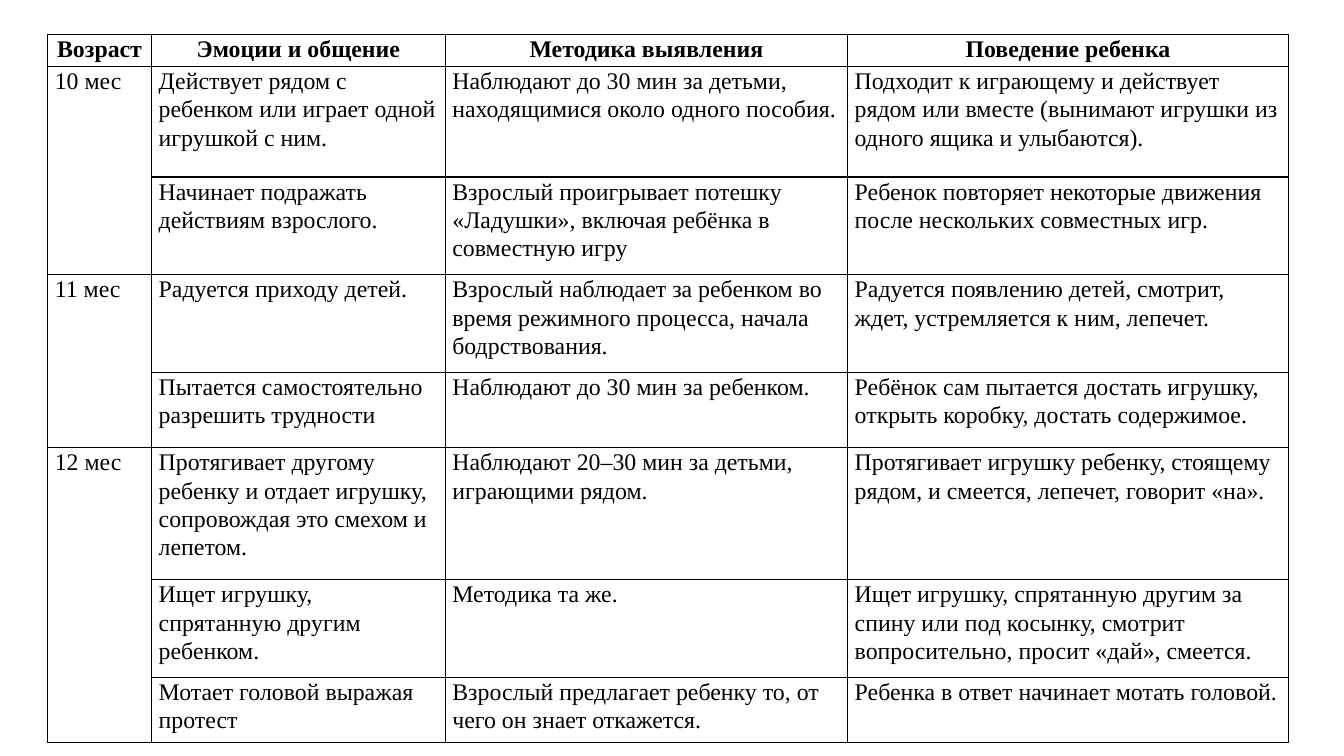
from lxml.etree import SubElement as Sub
from pptx import Presentation
from pptx.dml.color import RGBColor
from pptx.enum.text import PP_ALIGN as Align
from pptx.oxml.ns import qn
from pptx.util import Cm, Pt

BLACK = RGBColor(0, 0, 0)
FONT = "Times New Roman"
COLS = [2.62, 7.4, 10.14, 11.11]
ROWS = [0.81, 2.79, 2.46, 2.46, 1.9, 3.33, 2.46, 1.63]

HEAD = ["Возраст", "Эмоции и общение", "Методика выявления", "Поведение ребенка"]
# Each age with its rows: emotion, method, behaviour
AGES = {
    "10 мес": [
        ("Действует рядом с ребенком или играет одной игрушкой с ним.",
         "Наблюдают до 30 мин за детьми, находящимися около одного пособия.",
         "Подходит к играющему и действует рядом или вместе "
         "(вынимают игрушки из одного ящика и улыбаются)."),
        ("Начинает подражать действиям взрослого.",
         "Взрослый проигрывает потешку «Ладушки», включая ребёнка в совместную игру",
         "Ребенок повторяет некоторые движения после нескольких совместных игр."),
    ],
    "11 мес": [
        ("Радуется приходу детей.",
         "Взрослый наблюдает за ребенком во время режимного процесса, "
         "начала бодрствования.",
         "Радуется появлению детей, смотрит, ждет, устремляется к ним, лепечет."),
        ("Пытается самостоятельно разрешить трудности",
         "Наблюдают до 30 мин за ребенком.",
         "Ребёнок сам пытается достать игрушку, открыть коробку, достать содержимое."),
    ],
    "12 мес": [
        ("Протягивает другому ребенку и отдает игрушку, "
         "сопровождая это смехом и лепетом.",
         "Наблюдают 20–30 мин за детьми, играющими рядом.",
         "Протягивает игрушку ребенку, стоящему рядом, и смеется, "
         "лепечет, говорит «на»."),
        ("Ищет игрушку, спрятанную другим ребенком.",
         "Методика та же.",
         "Ищет игрушку, спрятанную другим за спину или под косынку, "
         "смотрит вопросительно, просит «дай», смеется."),
        ("Мотает головой выражая протест",
         "Взрослый предлагает ребенку то, от чего он знает откажется.",
         "Ребенка в ответ начинает мотать головой."),
    ],
}


def frame(cell):
    """Draw thin black borders round a cell and leave it unfilled."""
    props = cell._tc.get_or_add_tcPr()
    for side in ("a:lnL", "a:lnR", "a:lnT", "a:lnB"):
        line = Sub(props, qn(side), w=str(Pt(1)))
        fill = Sub(line, qn("a:solidFill"))
        Sub(fill, qn("a:srgbClr"), val=str(BLACK))
    cell.fill.background()


def write(cell, text, head=False):
    """Put text in a cell in the style of the head or the body."""
    cell.margin_left = cell.margin_right = Cm(0.18)
    cell.margin_top = cell.margin_bottom = 0
    para = cell.text_frame.paragraphs[0]
    para.text = text
    para.alignment = Align.CENTER if head else Align.LEFT
    para.line_spacing = 1.07
    font = para.runs[0].font
    font.name, font.size, font.bold = FONT, Pt(17), head
    font.color.rgb = BLACK


def add_grid(slide, left, top, width, height):
    """Build the table of ages in the given box."""
    table = slide.shapes.add_table(
        len(ROWS), len(COLS), Cm(left), Cm(top), Cm(width), Cm(height)).table
    table.first_row = table.horz_banding = False
    for col, size in zip(table.columns, COLS):
        col.width = Cm(size * width / sum(COLS))
    for row, size in zip(table.rows, ROWS):
        row.height = Cm(size * height / sum(ROWS))
    for cell in table.iter_cells():
        frame(cell)

    # Head row
    for col, text in enumerate(HEAD):
        write(table.cell(0, col), text, head=True)

    # One merged age cell beside each group of rows
    row = 1
    for age, group in AGES.items():
        first = table.cell(row, 0)
        first.merge(table.cell(row + len(group) - 1, 0))
        write(first, age)
        for texts in group:
            for col, text in enumerate(texts, 1):
                write(table.cell(row, col), text)
            row += 1


def main():
    deck = Presentation()
    deck.slide_width, deck.slide_height = Cm(33.87), Cm(19.05)
    slide = deck.slides.add_slide(deck.slide_layouts[6])
    add_grid(slide, 1.2, 0.86, sum(COLS), sum(ROWS))
    deck.save("out.pptx")


if __name__ == "__main__":
    main()
